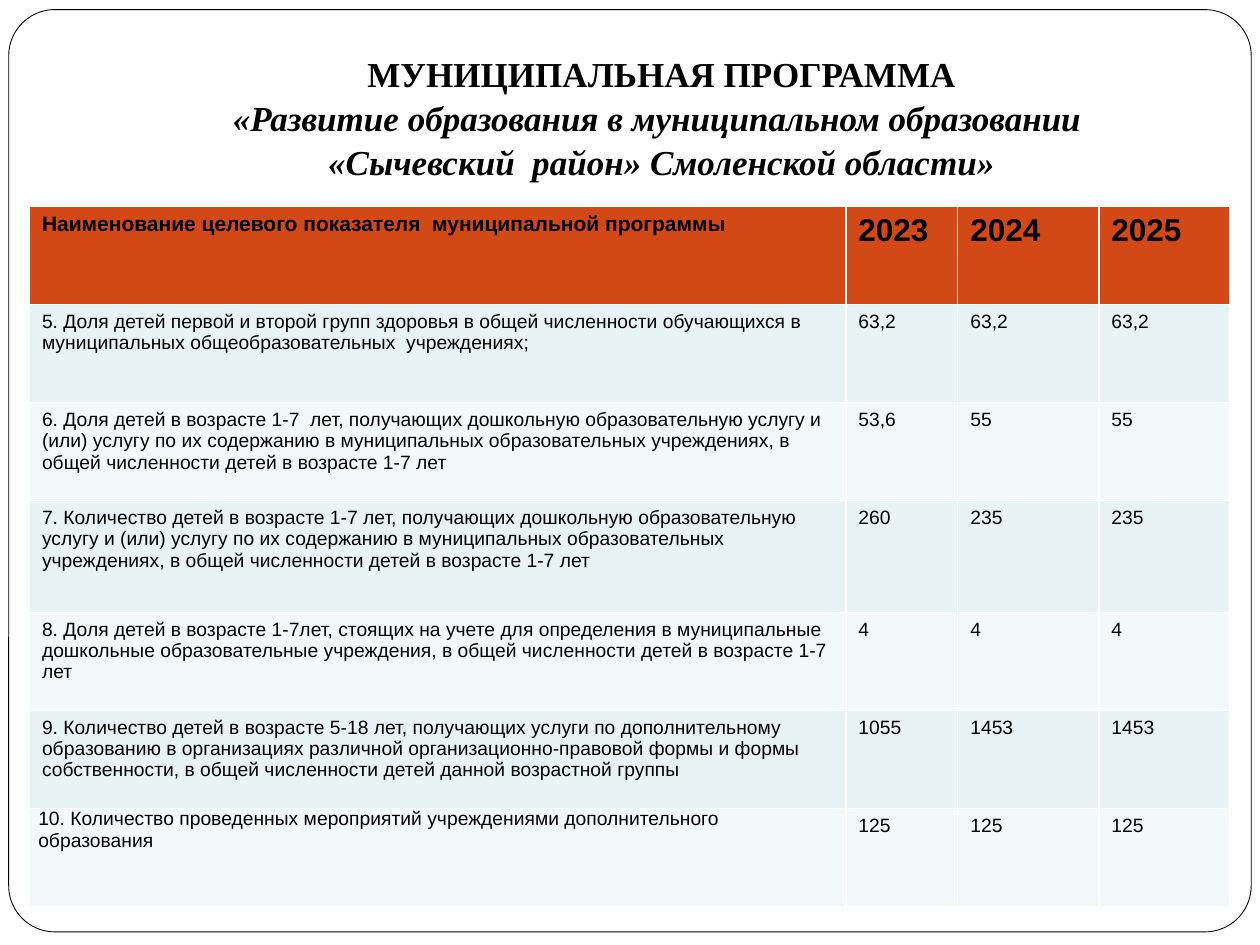
from copy import deepcopy

from pptx import Presentation
from pptx.dml.color import RGBColor
from pptx.enum.shapes import MSO_SHAPE
from pptx.enum.text import MSO_ANCHOR, MSO_AUTO_SIZE, PP_ALIGN
from pptx.oxml.ns import qn
from pptx.util import Pt

ROUNDED = MSO_SHAPE.ROUNDED_RECTANGLE
BOTTOM = MSO_ANCHOR.BOTTOM
CENTER = PP_ALIGN.CENTER
NO_FIT = MSO_AUTO_SIZE.NONE
TITLE_ONLY = 5

HEADING = (
    "МУНИЦИПАЛЬНАЯ ПРОГРАММА",
    "«Развитие образования в муниципальном образовании ",
    "«Сычевский  район» Смоленской области»",
)
INDICATORS = [
    ("Наименование целевого показателя  муниципальной программы", "2023", "2024", "2025"),
    ("5. Доля детей первой и второй групп здоровья в общей численности обучающихся в "
     "муниципальных общеобразовательных  учреждениях;", "63,2", "63,2", "63,2"),
    ("6. Доля детей в возрасте 1-7  лет, получающих дошкольную образовательную услугу и "
     "(или) услугу по их содержанию в муниципальных образовательных учреждениях, в "
     "общей численности детей в возрасте 1-7 лет", "53,6", "55", "55"),
    ("7. Количество детей в возрасте 1-7 лет, получающих дошкольную образовательную "
     "услугу и (или) услугу по их содержанию в муниципальных образовательных "
     "учреждениях, в общей численности детей в возрасте 1-7 лет", "260", "235", "235"),
    ("8. Доля детей в возрасте 1-7лет, стоящих на учете для определения в муниципальные "
     "дошкольные образовательные учреждения, в общей численности детей в возрасте 1-7 лет",
     "4", "4", "4"),
    ("9. Количество детей в возрасте 5-18 лет, получающих услуги по дополнительному "
     "образованию в организациях различной организационно-правовой формы и формы "
     "собственности, в общей численности детей данной возрастной группы",
     "1055", "1453", "1453"),
    ("10. Количество проведенных мероприятий учреждениями дополнительного образования",
     "125", "125", "125"),
]
COLUMN_WIDTHS = (466.5, 64, 80.6, 75)
ROW_HEIGHTS = (56, 56, 56, 64, 56, 56, 56)


def color(value):
    return RGBColor.from_string(value)


class ProgramSlide:
    """Holds the style and the slide, and adds each kind of element."""

    ink, paper, accent = "000000", "FFFFFF", "D34817"
    bands = ("F3F9FA", "E7F3F4")
    title_font, table_font = "Times New Roman", "Arial"

    def __init__(self, slide):
        self.slide = slide

    def style(self, run, font, size, bold, italic=False):
        run.font.name = font
        run.font.size = Pt(size)
        run.font.bold = bold
        run.font.italic = italic
        run.font.color.rgb = color(self.ink)

    def title(self, lines, left, top, width, height):
        heading = self.slide.shapes.title
        heading.left, heading.top = Pt(left), Pt(top)
        heading.width, heading.height = Pt(width), Pt(height)
        frame = heading.text_frame
        frame.word_wrap = True
        frame.auto_size = NO_FIT
        frame.vertical_anchor = BOTTOM
        frame.margin_bottom = Pt(7.2)
        paragraph = frame.paragraphs[0]
        paragraph.text = "\v".join(lines)
        paragraph.alignment = CENTER
        paragraph.line_spacing = 1.05
        for number, run in enumerate(paragraph.runs):
            self.style(run, self.title_font, 20, True, number > 0)
        run_style = paragraph.runs[0].font._element
        for line_break in paragraph._p.findall(qn("a:br")):
            line_break.append(deepcopy(run_style))

    def border(self, left, top, width, height):
        outline = self.slide.shapes.add_shape(ROUNDED, Pt(left), Pt(top), Pt(width), Pt(height))
        outline.adjustments[0] = 0.05
        outline.shadow.inherit = False
        outline.fill.solid()
        outline.fill.fore_color.rgb = color(self.paper)
        outline.line.color.rgb = color(self.ink)
        outline.line.width = Pt(0.5)
        self.slide.shapes.title.element.addprevious(outline.element)

    def cell(self, cell, text, fill, size, bold):
        cell.text_frame.text = text
        cell.fill.solid()
        cell.fill.fore_color.rgb = color(fill)
        self.style(cell.text_frame.paragraphs[0].runs[0], self.table_font, size, bold)

    def table(self, rows, left, top, widths, heights):
        table = self.slide.shapes.add_table(
            len(rows), len(widths), Pt(left), Pt(top), Pt(sum(widths)), Pt(sum(heights))
        ).table
        for column, width in zip(table.columns, widths):
            column.width = Pt(width)
        for row, height in zip(table.rows, heights):
            row.height = Pt(height)
        for r, values in enumerate(rows):
            fill = self.bands[r % 2] if r else self.accent
            for c, text in enumerate(values):
                size = 11 if r else (18 if c else 12)
                self.cell(table.cell(r, c), text, fill, size, r == 0)
        return table


def main():
    deck = Presentation()
    deck.slide_width, deck.slide_height = Pt(720), Pt(540)
    page = ProgramSlide(deck.slides.add_slide(deck.slide_layouts[TITLE_ONLY]))
    page.border(5, 5.5, 710, 527)
    page.title(HEADING, 72, 21.6, 612, 90)
    indicators = page.table(INDICATORS, 16.8, 118, COLUMN_WIDTHS, ROW_HEIGHTS)
    events = indicators.cell(len(INDICATORS) - 1, 0)
    events.margin_left = events.margin_right = Pt(5.1)
    events.margin_top = events.margin_bottom = 0
    deck.save("out.pptx")


if __name__ == "__main__":
    main()
